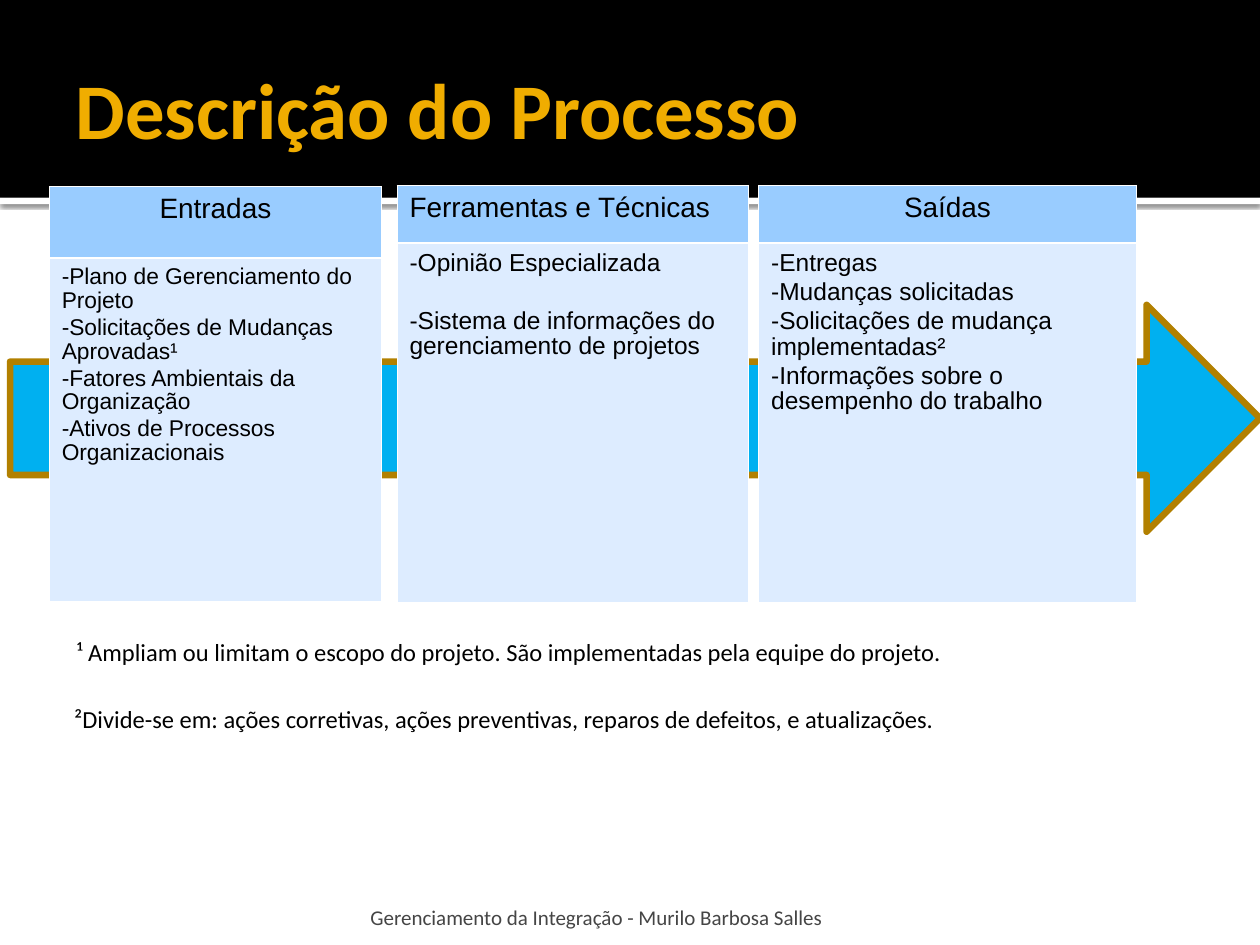
from lxml.etree import SubElement
from pptx import Presentation
from pptx.dml.color import RGBColor
from pptx.enum.shapes import MSO_SHAPE as SHAPE
from pptx.enum.text import MSO_ANCHOR as ANCHOR, PP_ALIGN as ALIGN
from pptx.oxml import parse_xml
from pptx.oxml.ns import nsdecls, qn
from pptx.util import Inches, Pt

COLORS = {
    "black": "000000", "white": "FFFFFF", "title": "F0AD00", "footer": "454545",
    "arrow": "00B0F0", "arrow_line": "B28000", "head": "99CCFF", "body": "DDECFF",
}

# left, top, width, row heights, heading, heading alignment, text size, items
TABLES = [
    (0.39, 1.48, 2.64, (0.57, 2.72), "Entradas", ALIGN.CENTER, 13, [
        "-Plano de Gerenciamento do Projeto",
        "-Solicitações de Mudanças Aprovadas¹",
        "-Fatores Ambientais da Organização",
        "-Ativos de Processos Organizacionais"]),
    (3.15, 1.47, 2.79, (0.46, 2.85), "Ferramentas e Técnicas", ALIGN.LEFT, 14, [
        "-Opinião Especializada",
        "-Sistema de informações do gerenciamento de projetos"]),
    (6.02, 1.47, 3, (0.46, 2.85), "Saídas", ALIGN.CENTER, 14, [
        "-Entregas",
        "-Mudanças solicitadas",
        "-Solicitações de mudança implementadas²",
        "-Informações sobre o desempenho do trabalho"]),
]

NOTES = [
    (0.51, 5.01, "¹ Ampliam ou limitam o escopo do projeto. "
                 "São implementadas pela equipe do projeto."),
    (0.49, 5.54, "²Divide-se em: ações corretivas, ações preventivas, "
                 "reparos de defeitos, e atualizações."),
]


def rgb(name):
    return RGBColor.from_string(COLORS[name])


def add_run(p, text, size, color="black", font="Calibri", bold=False):
    r = p.add_run()
    r.text = text
    r.font.name, r.font.size, r.font.bold = font, Pt(size), bold
    r.font.color.rgb = rgb(color)


def set_margins(target, left, top, right, bottom):
    target.margin_left, target.margin_top = Inches(left), Inches(top)
    target.margin_right, target.margin_bottom = Inches(right), Inches(bottom)


def add_block(slide, kind, left, top, width, height, fill, line=None, line_width=0):
    sp = slide.shapes.add_shape(
        kind, Inches(left), Inches(top), Inches(width), Inches(height))
    sp.shadow.inherit = False
    sp.fill.solid()
    sp.fill.fore_color.rgb = rgb(fill)
    if line:
        sp.line.color.rgb = rgb(line)
        sp.line.width = Pt(line_width)
    else:
        sp.line.fill.background()
    return sp


def add_shadow(sp):
    effects = sp._element.spPr.find(qn("a:effectLst"))
    effects.append(parse_xml(
        f'<a:outerShdw {nsdecls("a")} blurRad="{Pt(2.5)}" dist="{Pt(0.8)}" '
        f'dir="5400000" algn="tl" rotWithShape="0"><a:srgbClr val="{COLORS["black"]}">'
        '<a:alpha val="60000"/></a:srgbClr></a:outerShdw>'))


def add_title(slide, text):
    sp = slide.shapes.title
    sp.left, sp.top, sp.width, sp.height = map(Inches, (0.5, 0.17, 9, 1.37))
    tf = sp.text_frame
    tf.vertical_anchor = ANCHOR.MIDDLE
    set_margins(tf, 0.1, 0.05, 0.05, 0.05)
    p = tf.paragraphs[0]
    p.alignment = ALIGN.LEFT
    add_run(p, text, 45, "title", bold=True)


def add_text(slide, left, top, width, height, text, size, color="black"):
    sp = slide.shapes.add_textbox(
        Inches(left), Inches(top), Inches(width), Inches(height))
    tf = sp.text_frame
    tf.word_wrap = True
    add_run(tf.paragraphs[0], text, size, color)
    return tf


def set_borders(cell, top, bottom):
    tc_pr = cell._tc.get_or_add_tcPr()
    for side, width in (("L", 0.45), ("R", 0.45), ("T", top), ("B", bottom)):
        ln = SubElement(tc_pr, qn(f"a:ln{side}"), w=str(Pt(width)))
        fill = SubElement(ln, qn("a:solidFill"))
        SubElement(fill, qn("a:srgbClr"), val=COLORS["white"])


def fill_cell(cell, items, size, fill, space_after, top_margin, align=ALIGN.LEFT):
    cell.fill.solid()
    cell.fill.fore_color.rgb = rgb(fill)
    set_margins(cell, 0.1, top_margin, 0.1, 0.05)
    tf = cell.text_frame
    for i, text in enumerate(items):
        p = tf.add_paragraph() if i else tf.paragraphs[0]
        p.alignment, p.line_spacing, p.space_after = align, 0.93, Pt(space_after)
        add_run(p, text, size, font="Arial")


def add_process_table(slide, left, top, width, rows, heading, align, size, items):
    frame = slide.shapes.add_table(
        2, 1, Inches(left), Inches(top), Inches(width), Inches(sum(rows)))
    table = frame.table
    for row, height in zip(table.rows, rows):
        row.height = Inches(height)
    head, body = table.cell(0, 0), table.cell(1, 0)
    # Borders come before the fill in the cell properties
    set_borders(head, 0.45, 1.47)
    set_borders(body, 1.47, 0.45)
    fill_cell(head, [heading], 16, "head", 14.2, 0.07, align)
    # A list of two items is set one line apart
    fill_cell(body, items, size, "body", 18.6 if len(items) == 2 else 2, 0.06)


def main():
    prs = Presentation()
    prs.slide_width, prs.slide_height = Inches(10), Inches(7.5)
    slide = prs.slides.add_slide(prs.slide_layouts[5])

    # Title band with its shadowed edge; the title stays in front
    add_shadow(add_block(slide, SHAPE.RECTANGLE, 0, 1.57, 10, 0.05, "white"))
    add_block(slide, SHAPE.RECTANGLE, 0, 0, 10, 1.57, "black")
    add_title(slide, "Descrição do Processo")
    slide.shapes._spTree.append(slide.shapes.title._element)

    # Footer
    tf = add_text(slide, 2.89, 7.08, 6.02, 0.3,
                  "Gerenciamento da Integração - Murilo Barbosa Salles", 12, "footer")
    tf.vertical_anchor = ANCHOR.BOTTOM
    set_margins(tf, 0.05, 0.05, 0.05, 0)

    # Process arrow behind the three tables
    add_block(slide, SHAPE.RIGHT_ARROW, 0.08, 2.42, 9.92, 1.8,
              "arrow", "arrow_line", 3.78)
    for table in TABLES:
        add_process_table(slide, *table)

    # Footnotes
    for left, top, text in NOTES:
        add_text(slide, left, top, 9.13, 0.73, text, 14)

    prs.save("out.pptx")


if __name__ == "__main__":
    main()
